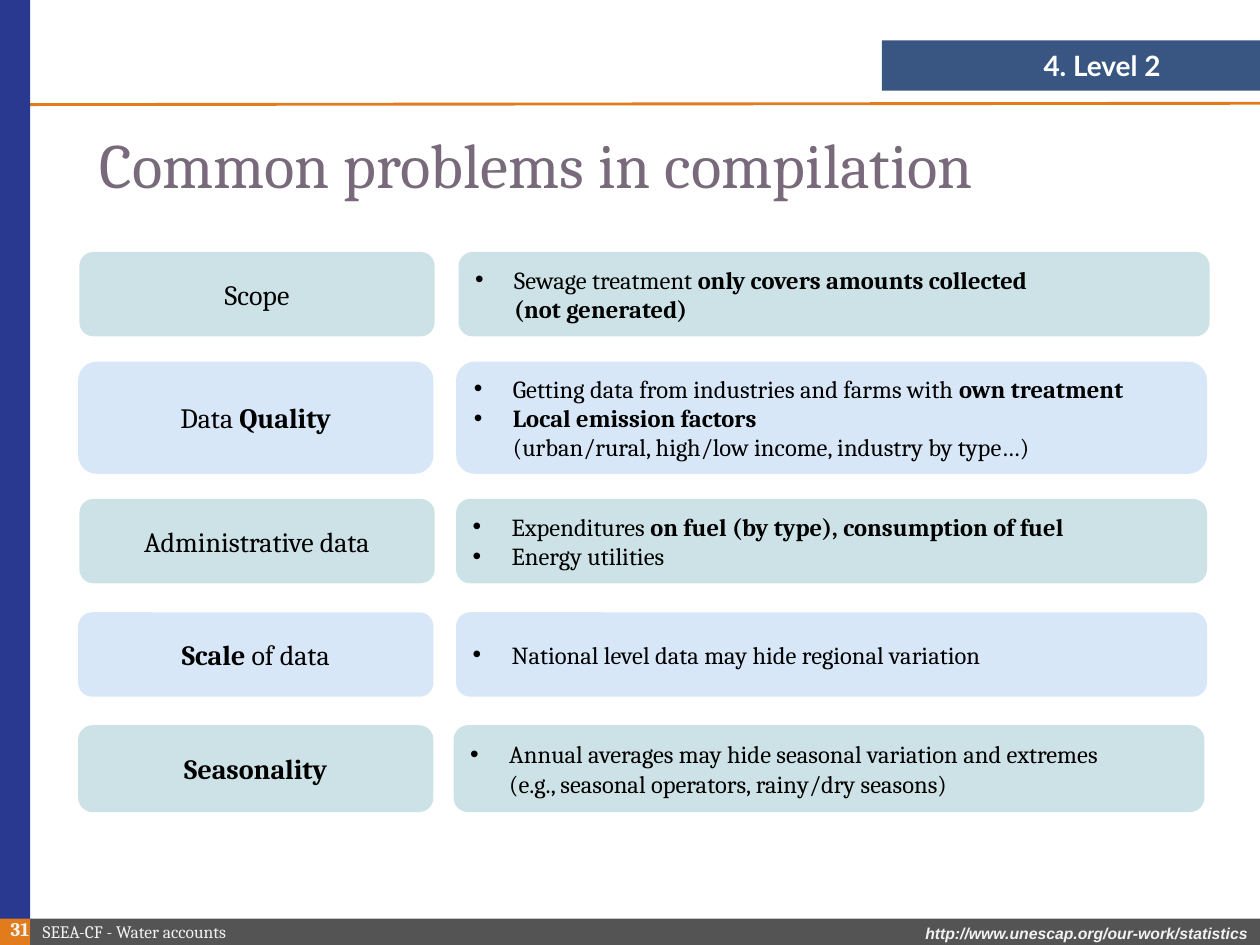
from lxml import etree
from pptx import Presentation
from pptx.dml.color import RGBColor
from pptx.enum.shapes import MSO_CONNECTOR as Connector
from pptx.enum.shapes import MSO_SHAPE as Shape
from pptx.enum.text import MSO_ANCHOR as Anchor
from pptx.enum.text import PP_ALIGN as Align
from pptx.oxml.ns import qn
from pptx.util import Inches, Pt

COLORS = {
    "banner": "072C62",
    "footer": "545454",
    "sidebar": "2A3990",
    "accent": "E17B1C",
    "teal": "9CC7CE",
    "blue": "7EB2E6",
    "title": "78697B",
    "pale": "F2F2F2",
    "white": "FFFFFF",
    "black": "000000",
}
OPACITY = {"banner": 80, "teal": 50, "blue": 30}
LABEL_WIDTH, DETAIL_WIDTH = 2.82, 5.96
HANGING = 0.31

TOPICS = [
    (0.63, 3.64, 2, 0.67, "teal", "Scope",
     [("•", "Sewage treatment **only covers amounts collected**"),
      ("", "**(not generated)**")]),
    (0.62, 3.62, 2.87, 0.89, "blue", "Data **Quality**",
     [("•", "Getting data from industries and farms with **own treatment**"),
      ("•", "**Local emission factors**"),
      ("", "(urban/rural, high/low income, industry by type…)")]),
    (0.63, 3.62, 3.96, 0.67, "teal", "Administrative data",
     [("•", "Expenditures **on fuel (by type), consumption of fuel**"),
      ("•", "Energy utilities")]),
    (0.62, 3.62, 4.86, 0.67, "blue", "**Scale** of data",
     [("•", "National level data may hide regional variation")]),
    (0.62, 3.6, 5.755, 0.69, "teal", "**Seasonality**",
     [("•", "Annual averages may hide seasonal variation and extremes"),
      ("", "(e.g., seasonal operators, rainy/dry seasons)")]),
]


def rgb(name):
    return RGBColor.from_string(COLORS[name])


def add_panel(slide, box, color, preset=Shape.RECTANGLE):
    panel = slide.shapes.add_shape(preset, *map(Inches, box))
    panel.shadow.inherit = False
    panel.line.fill.background()
    panel.fill.solid()
    panel.fill.fore_color.rgb = rgb(color)
    if color in OPACITY:
        tone = next(panel.fill._xPr.iter(qn("a:srgbClr")))
        etree.SubElement(tone, qn("a:alpha"), val=str(OPACITY[color] * 1000))
    return panel


def add_textbox(slide, box):
    return slide.shapes.add_textbox(*map(Inches, box))


def set_hanging(paragraph, bullet):
    properties = paragraph._p.get_or_add_pPr()
    properties.set("marL", str(Inches(HANGING)))
    properties.set("indent", str(-Inches(HANGING) if bullet else 0))
    if bullet:
        etree.SubElement(properties, qn("a:buFont"), typeface="Arial")
        etree.SubElement(properties, qn("a:buChar"), char=bullet)
    else:
        etree.SubElement(properties, qn("a:buNone"))


def write(holder, text, size=14, font="Cambria", color="black", bold=False,
          italic=False, align=Align.LEFT, anchor=Anchor.MIDDLE, spacing=None):
    frame = holder.text_frame
    frame.word_wrap = True
    frame.vertical_anchor = anchor
    lines = [(None, text)] if isinstance(text, str) else text
    for index, (bullet, line) in enumerate(lines):
        paragraph = frame.add_paragraph() if index else frame.paragraphs[0]
        paragraph.alignment = align
        if spacing:
            paragraph.line_spacing = spacing
        if bullet is not None:
            set_hanging(paragraph, bullet)
        for part, words in enumerate(line.split("**")):
            if words:
                run = paragraph.add_run()
                run.text = words
                run.font.size = Pt(size)
                run.font.name = font
                run.font.bold = bold or part % 2 == 1
                run.font.italic = italic
                run.font.color.rgb = rgb(color)


def add_header(slide, left, top, width, height):
    add_panel(slide, (left, top, width, height), "banner")
    write(add_textbox(slide, (left, top + 0.01, 2.31, 0.37)), "4. Level 2",
          size=16, font="Lato", color="white", bold=True, align=Align.RIGHT)
    rule = slide.shapes.add_connector(
        Connector.STRAIGHT, *map(Inches, (0.24, 0.83, left + width, 0.82)))
    rule.line.color.rgb = rgb("accent")
    rule.line.width = Pt(1.65)
    etree.SubElement(rule._element.spPr, qn("a:effectLst"))


def add_footer(slide, left, top, width, height):
    add_panel(slide, (left, top, width, height), "footer")
    add_panel(slide, (0, 0, left, top + height), "sidebar")
    add_panel(slide, (0, top, left, height), "accent")
    write(add_textbox(slide, (left + width - 3.74, top - 0.01, 3.74, 0.25)),
          "http://www.unescap.org/our-work/statistics", size=9, font="Arial",
          color="pale", bold=True, italic=True, align=Align.RIGHT, anchor=Anchor.TOP)
    write(add_textbox(slide, (left, top, 2.99, 0.2)), "SEEA-CF - Water accounts",
          size=10, color="pale")
    write(add_textbox(slide, (-0.07, top - 0.07, 0.4, 0.31)), "31",
          size=11, color="pale", bold=True, align=Align.RIGHT)


def add_title(slide, left, top, width, height):
    write(add_textbox(slide, (left, top, width, height)),
          "Common problems in compilation", size=36, color="title", spacing=0.9)


def add_topic(slide, label_left, detail_left, top, height, tint, label, details):
    label_box = (label_left, top, LABEL_WIDTH, height)
    detail_box = (detail_left, top, DETAIL_WIDTH, height)
    write(add_panel(slide, label_box, tint, Shape.ROUNDED_RECTANGLE), label,
          size=16, align=Align.CENTER)
    write(add_panel(slide, detail_box, tint, Shape.ROUNDED_RECTANGLE), details)


def main():
    deck = Presentation()
    deck.slide_width, deck.slide_height = Inches(10), Inches(7.5)
    slide = deck.slides.add_slide(deck.slide_layouts[6])
    add_header(slide, 7, 0.32, 3, 0.4)
    add_footer(slide, 0.24, 7.29, 9.76, 0.21)
    add_title(slide, 0.69, 0.89, 8.62, 0.89)
    for topic in TOPICS:
        add_topic(slide, *topic)
    deck.save("out.pptx")


if __name__ == "__main__":
    main()
